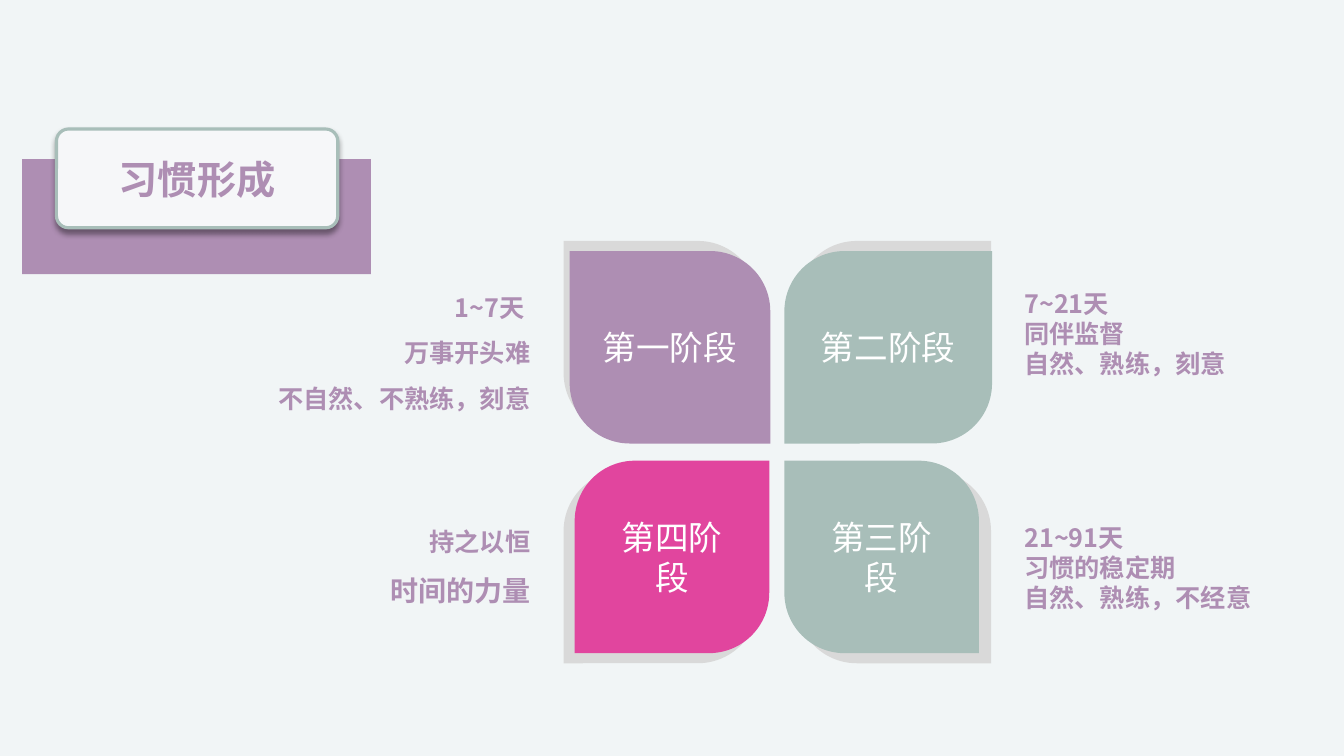
from typing import NamedTuple

from lxml import etree
from pptx import Presentation
from pptx.dml.color import RGBColor
from pptx.enum import shapes, text
from pptx.oxml import ns
from pptx.util import Inches, Pt

FONT = "Noto Sans CJK SC"
PURPLE, GREEN, PINK, GREY = "AE8EB3", "A8BEB9", "E1459E", "D9D9D9"
LEAF_H, BACK_W, ROUND = 1.91, 1.93, 0.313
LEFT, RIGHT = text.PP_ALIGN.LEFT, text.PP_ALIGN.RIGHT
RECT = shapes.MSO_SHAPE.RECTANGLE
CARD = shapes.MSO_SHAPE.ROUNDED_RECTANGLE
LEAF = shapes.MSO_SHAPE.ROUND_2_DIAG_RECTANGLE


class Line(NamedTuple):
    text: str
    size: float = 18
    spacing: float = 1.0


class Stage(NamedTuple):
    name: str
    color: str
    left: float
    top: float
    width: float
    back_left: float
    back_top: float
    adj: tuple[float, float]
    body_idx: int
    body_at: tuple[float, float, float, float]
    align: text.PP_ALIGN
    lines: list[Line]


RISING, FALLING = (0, ROUND), (ROUND, 0)
STAGES = [
    Stage("第一阶段", PURPLE, 5.65, 2.49, 1.99, 5.59, 2.39, RISING, 1,
          (2.31, 2.69, 3.08, 1.33), RIGHT,
          [Line("1~7天 ", spacing=1.5), Line("万事开头难", spacing=1.5),
           Line("不自然、不熟练，刻意", spacing=1.5)]),
    Stage("第二阶段", GREEN, 7.78, 2.49, 2.06, 7.9, 2.39, FALLING, 2,
          (10.03, 2.65, 3.08, 1.06), LEFT,
          [Line("7~21天", spacing=1.5), Line("同伴监督"), Line("自然、熟练，刻意")]),
    Stage("第三阶段", GREEN, 7.78, 4.57, 1.93, 7.9, 4.67, RISING, 3,
          (10.03, 4.97, 3.08, 1.36), LEFT,
          [Line("21~91天", spacing=1.5), Line("习惯的稳定期"), Line("自然、熟练，不经意")]),
    Stage("第四阶段", PINK, 5.7, 4.57, 1.93, 5.59, 4.67, FALLING, 4,
          (2.31, 5.01, 3.08, 0.92), RIGHT,
          [Line("持之以恒", spacing=1.5), Line("时间的力量", 20, 1.5)]),
]


def rgb(color: str) -> RGBColor:
    return RGBColor.from_string(color)


def add_block(s, kind, at, color: str, adj=()):
    sp = s.shapes.add_shape(kind, *map(Inches, at))
    sp.shadow.inherit = False
    sp.fill.solid()
    sp.fill.fore_color.rgb = rgb(color)
    sp.line.fill.background()
    for i, value in enumerate(adj):
        sp.adjustments[i] = value
    return sp


def add_drop_shadow(sp) -> None:
    effects = sp.element.spPr.find(ns.qn("a:effectLst"))
    shadow = etree.SubElement(effects, ns.qn("a:outerShdw"), blurRad=str(Pt(4)),
                              dist=str(Pt(3)), dir="5400000", algn="t", rotWithShape="0")
    black = etree.SubElement(shadow, ns.qn("a:srgbClr"), val="000000")
    etree.SubElement(black, ns.qn("a:alpha"), val="40000")


def place(sp, at) -> None:
    sp.left, sp.top, sp.width, sp.height = map(Inches, at)


def write(sp, lines: list[Line], *, color: str = PURPLE, bold: bool = True,
          align=text.PP_ALIGN.CENTER, anchor=text.MSO_ANCHOR.MIDDLE) -> None:
    tf = sp.text_frame
    tf.word_wrap = True
    tf.auto_size = text.MSO_AUTO_SIZE.NONE
    tf.vertical_anchor = anchor
    tf.margin_left = tf.margin_right = Inches(0.13)
    tf.margin_top = tf.margin_bottom = Inches(0.06)
    for i, line in enumerate(lines):
        p = tf.add_paragraph() if i else tf.paragraphs[0]
        p.alignment, p.line_spacing = align, line.spacing
        p.space_before = p.space_after = Pt(0)
        pPr = p._p.get_or_add_pPr()
        pPr.set("marL", "0")
        pPr.set("indent", "0")
        etree.SubElement(pPr, ns.qn("a:buNone"))
        r = p.add_run()
        r.text = line.text
        r.font.size, r.font.bold, r.font.name = Pt(line.size), bold, FONT
        r.font.color.rgb = rgb(color)
        etree.SubElement(r.font._element, ns.qn("a:ea"), typeface=FONT)


def add_title(s) -> None:
    at = (0.56, 1.28, 2.79, 0.98)
    add_block(s, RECT, (0.22, 1.58, 3.46, 1.14), PURPLE)
    card = add_block(s, CARD, at, "F6F7F9", [0.122])
    card.line.color.rgb = rgb(GREEN)
    card.line.width = Pt(2.25)
    add_drop_shadow(card)
    title = s.shapes.title
    place(title, at)
    write(title, [Line("习惯形成", 28)])
    card.element.addnext(title.element)


def add_stage(s, stage: Stage) -> None:
    add_block(s, LEAF, (stage.back_left, stage.back_top, BACK_W, LEAF_H), GREY, stage.adj)
    leaf = add_block(s, LEAF, (stage.left, stage.top, stage.width, LEAF_H),
                     stage.color, stage.adj)
    write(leaf, [Line(stage.name, 24)], color="FFFFFF", bold=False)
    body = s.placeholders[stage.body_idx]
    place(body, stage.body_at)
    write(body, stage.lines, align=stage.align, anchor=text.MSO_ANCHOR.TOP)


def main() -> None:
    prs = Presentation()
    prs.slide_width, prs.slide_height = Inches(13.33), Inches(7.5)
    comparison = prs.slide_layouts[4]
    s = prs.slides.add_slide(comparison)
    s.background.fill.solid()
    s.background.fill.fore_color.rgb = rgb("F1F5F6")
    add_title(s)
    for stage in STAGES:
        add_stage(s, stage)
    prs.save("out.pptx")


if __name__ == "__main__":
    main()
